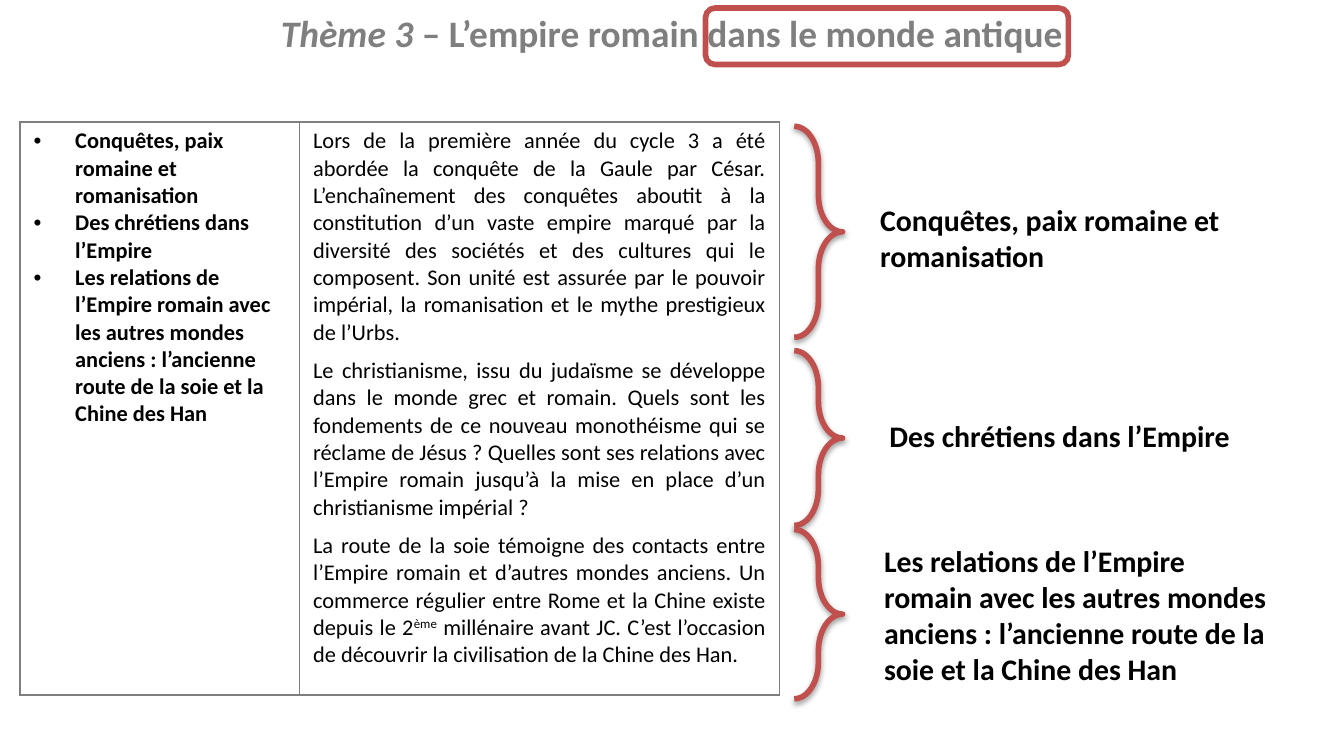
"""Build a slide linking a history syllabus to its three chapters."""
from lxml import etree
from pptx import Presentation
from pptx.dml.color import RGBColor
from pptx.enum import shapes, text
from pptx.oxml import parse_xml
from pptx.oxml.ns import nsdecls, qn
from pptx.util import Inches, Pt

HUES = {"ink": "000000", "grey": "7F7F7F", "red": "C0504D"}
FONT = "Calibri"
WIDE = 10

TITLE = [("Thème 3 ", {"italic": True}),
         ("– L’empire romain dans le monde antique", {})]
TOPICS = [
    "Conquêtes, paix romaine et romanisation",
    "Des chrétiens dans l’Empire",
    "Les relations de l’Empire romain avec les autres mondes anciens : "
    "l’ancienne route de la soie et la Chine des Han",
]
NOTES = [
    "Lors de la première année du cycle 3 a été abordée la conquête de la "
    "Gaule par César. L’enchaînement des conquêtes aboutit à la constitution "
    "d’un vaste empire marqué par la diversité des sociétés et des cultures "
    "qui le composent. Son unité est assurée par le pouvoir impérial, la "
    "romanisation et le mythe prestigieux de l’Urbs. ",
    "Le christianisme, issu du judaïsme se développe dans le monde grec et "
    "romain. Quels sont les fondements de ce nouveau monothéisme qui se "
    "réclame de Jésus ? Quelles sont ses relations avec l’Empire romain "
    "jusqu’à la mise en place d’un christianisme impérial ?",
    [("La route de la soie témoigne des contacts entre l’Empire romain et "
      "d’autres mondes anciens. Un commerce régulier entre Rome et la Chine "
      "existe depuis le 2", {}),
     ("ème", {"base": 30000}),
     (" millénaire avant JC. C’est l’occasion de découvrir la civilisation "
      "de la Chine des Han. ", {})],
]
BRACES = [(0.94, 1.57), (2.61, 1.3), (3.94, 1.26)]
LABELS = [(6.45, 1.45, 2.98, 0.64), (6.52, 3.06, 3.07, 0.37),
          (6.48, 3.99, 3.07, 1.18)]
COLS = [2.08, 3.57]
HIGH = 4.26


def write(frame, paras, size=12, hue="ink", bold=True, align=None, after=None,
          bullet=False):
    """Fill a text frame; a paragraph is a string or a list of runs."""
    frame.word_wrap = True
    for i, item in enumerate(paras):
        para = frame.paragraphs[0] if i == 0 else frame.add_paragraph()
        para.alignment = align
        if after is not None:
            para.space_after = Pt(after)
        if bullet:
            props = para._p.get_or_add_pPr()
            props.set("marL", str(Inches(0.31)))
            props.set("indent", str(Inches(-0.31)))
            face = etree.SubElement(props, qn("a:buFont"))
            face.set("typeface", "Arial")
            etree.SubElement(props, qn("a:buChar")).set("char", "•")
        for words, style in [(item, {})] if isinstance(item, str) else item:
            run = para.add_run()
            run.text = words
            font = run.font
            font.name, font.size, font.bold = FONT, Pt(size), bold
            font.italic = style.get("italic", False)
            font.color.rgb = RGBColor.from_string(HUES[hue])
            if "base" in style:
                run._r.get_or_add_rPr().set("baseline", str(style["base"]))


def label(slide, box, paras, **fmt):
    """Add a text box."""
    frame = slide.shapes.add_textbox(*map(Inches, box)).text_frame
    write(frame, paras, **fmt)
    return frame


def outline(slide, kind, box):
    """Add an unfilled red shape."""
    shape = slide.shapes.add_shape(kind, *map(Inches, box))
    shape.shadow.inherit = False
    shape.fill.background()
    shape.line.color.rgb = RGBColor.from_string(HUES["red"])
    shape.line.width = Pt(3)
    return shape


def shade(shape):
    """Give a shape a soft shadow below it."""
    effects = shape._element.spPr.find(qn("a:effectLst"))
    effects.append(parse_xml(
        f'<a:outerShdw {nsdecls("a")} blurRad="{Pt(3.1)}" dist="{Pt(1.6)}" '
        f'dir="5400000" rotWithShape="0"><a:srgbClr val="{HUES["ink"]}">'
        '<a:alpha val="38000"/></a:srgbClr></a:outerShdw>'))


def frame_cell(cell):
    """Clear a cell's fill and draw its four borders."""
    cell.fill.background()
    cell.margin_left = cell.margin_right = Inches(0.1)
    cell.margin_top = cell.margin_bottom = Inches(0.04)
    props = cell._tc.get_or_add_tcPr()
    for i, side in enumerate("LRTB"):
        props.insert(i, parse_xml(
            f'<a:ln{side} {nsdecls("a")} w="{Pt(1)}"><a:solidFill>'
            f'<a:srgbClr val="{HUES["grey"]}"/></a:solidFill></a:ln{side}>'))


def main():
    deck = Presentation()
    deck.slide_width, deck.slide_height = Inches(WIDE), Inches(WIDE * 9 / 16)
    slide = deck.slides.add_slide(deck.slide_layouts[6])

    area = map(Inches, (0.15, 0.91, sum(COLS), HIGH))
    table = slide.shapes.add_table(1, len(COLS), *area).table
    table.first_row = table.horz_banding = False
    for col, width in zip(table.columns, COLS):
        col.width = Inches(width)
    left, right = table.cell(0, 0), table.cell(0, 1)
    for cell in (left, right):
        frame_cell(cell)
    write(left.text_frame, TOPICS, bullet=True)
    write(right.text_frame, NOTES, bold=False, after=6,
          align=text.PP_ALIGN.JUSTIFY)

    for (top, high), box, topic in zip(BRACES, LABELS, TOPICS):
        brace = outline(slide, shapes.MSO_SHAPE.RIGHT_BRACE,
                        (5.91, top, 0.36, high))
        brace.adjustments[0] = 0.76
        shade(brace)
        label(slide, box, [topic], size=16)

    head = label(slide, (0.5, -0.08, 9, 0.65), [TITLE], size=20, hue="grey",
                 align=text.PP_ALIGN.CENTER)
    head.vertical_anchor = text.MSO_ANCHOR.MIDDLE
    outline(slide, shapes.MSO_SHAPE.ROUNDED_RECTANGLE, (5.25, 0.06, 2.7, 0.42))
    deck.save("out.pptx")


if __name__ == "__main__":
    main()
